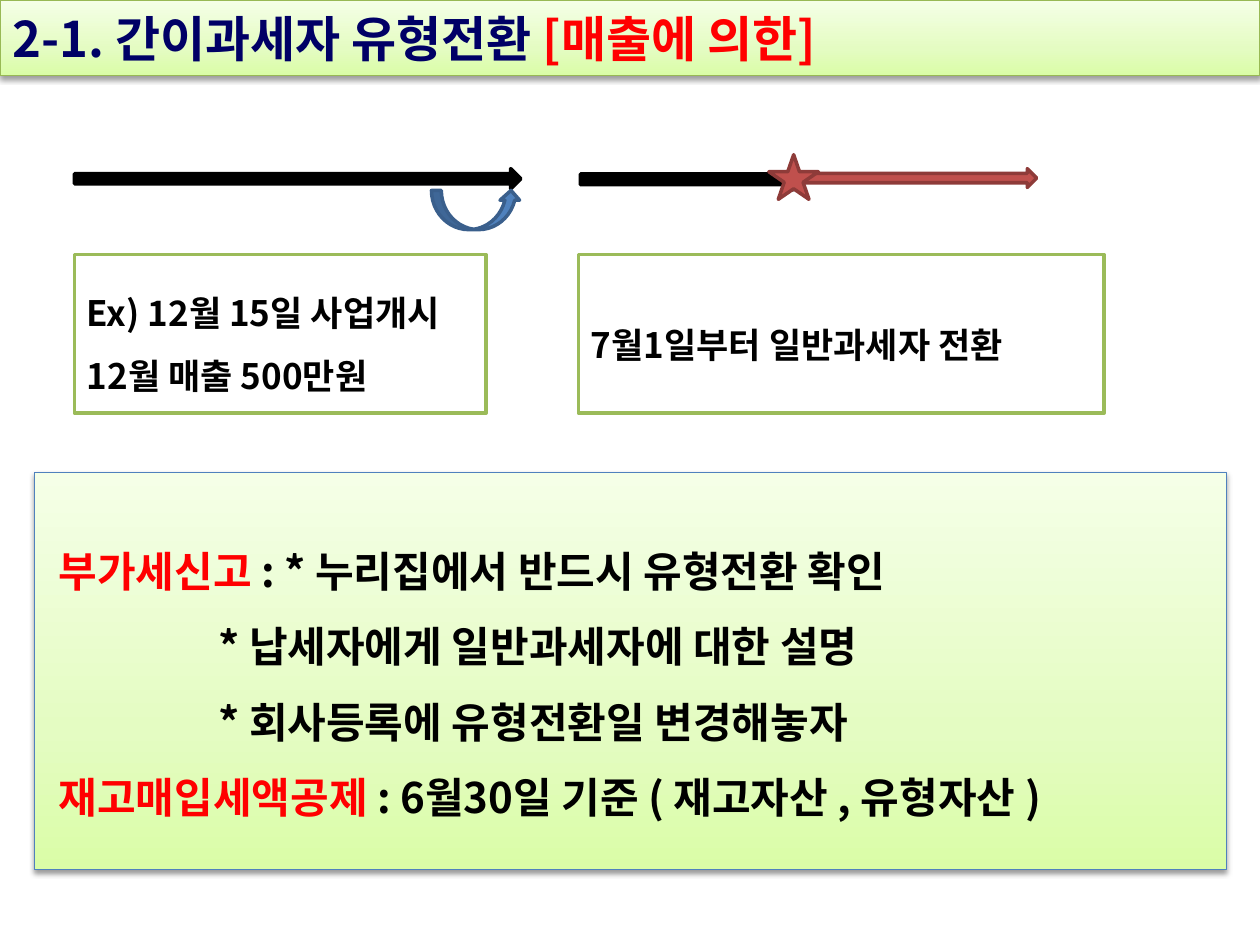
from copy import deepcopy

from lxml.etree import SubElement
from pptx import Presentation
from pptx.dml.color import RGBColor
from pptx.enum.shapes import MSO_SHAPE as SHAPE
from pptx.enum.text import MSO_ANCHOR as ANCHOR, PP_ALIGN as ALIGN
from pptx.oxml.ns import qn
from pptx.util import Cm, Pt

FONT = "Noto Sans CJK KR"
BLACK = RGBColor(0x00, 0x00, 0x00)
WHITE = RGBColor(0xFF, 0xFF, 0xFF)
RED = RGBColor(0xFF, 0x00, 0x00)
NAVY = RGBColor(0x00, 0x00, 0x66)
BLUE = RGBColor(0x4F, 0x81, 0xBD)
DARK_BLUE = RGBColor(0x3A, 0x5F, 0x8C)
BRICK = RGBColor(0xC0, 0x50, 0x4D)
DARK_BRICK = RGBColor(0x8E, 0x3B, 0x39)
GREEN = RGBColor(0x9B, 0xBB, 0x59)
DARK_GREEN = RGBColor(0x98, 0xB9, 0x55)
LIME_STOPS = [(0, RGBColor(0xDA, 0xFD, 0xA7)),
              (0.35, RGBColor(0xE4, 0xFC, 0xC2)),
              (1, RGBColor(0xF5, 0xFF, 0xE7))]

prs = Presentation()
prs.slide_width, prs.slide_height = Cm(25.4), Cm(19.05)
slide = prs.slides.add_slide(prs.slide_layouts[6])


def add_part(preset, left, top, width, height, line, fill=None, weight=2):
    """Add a shape; without a fill colour it gets the lime gradient and a soft shadow."""
    part = slide.shapes.add_shape(preset, Cm(left), Cm(top), Cm(width), Cm(height))
    part.shadow.inherit = False
    part.line.color.rgb = line
    part.line.width = Pt(weight)
    if fill is not None:
        part.fill.solid()
        part.fill.fore_color.rgb = fill
        return part

    part.fill.gradient()
    part.fill.gradient_angle = 90
    props = part._element.spPr
    stops = props.find(qn("a:gradFill")).find(qn("a:gsLst"))
    stops.append(deepcopy(stops[0]))
    for stop, (position, color) in zip(part.fill.gradient_stops, LIME_STOPS):
        stop.position = position
        stop.color.rgb = color
    shadow = SubElement(props.find(qn("a:effectLst")), qn("a:outerShdw"),
                        blurRad="40000", dist="20000", dir="5400000", rotWithShape="0")
    shade = SubElement(shadow, qn("a:srgbClr"), val="000000")
    SubElement(shade, qn("a:alpha"), val="38000")
    return part


def write(part, lines, size, spacing=None, indents=None):
    """Fill a shape with lines, each a list of (text, colour) pieces; indents are in cm."""
    frame = part.text_frame
    frame.word_wrap = True
    frame.vertical_anchor = ANCHOR.MIDDLE
    for i, pieces in enumerate(lines):
        paragraph = frame.paragraphs[0] if i == 0 else frame.add_paragraph()
        paragraph.alignment = ALIGN.LEFT
        if spacing:
            paragraph.line_spacing = spacing
        if indents:
            paragraph._p.get_or_add_pPr().set("marL", str(Cm(indents[i])))
        for text, color in pieces:
            run = paragraph.add_run()
            run.text = text
            run.font.name = FONT
            run.font.size = Pt(size)
            run.font.bold = True
            run.font.color.rgb = color
            SubElement(run._r.get_or_add_rPr(), qn("a:ea"), typeface=FONT)


title_bar = add_part(SHAPE.RECTANGLE, 0, 0, 25.4, 1.52, DARK_GREEN, weight=0.75)
write(title_bar, [[("2-1. 간이과세자 유형전환 ", NAVY), ("[매출에 의한]", RED)]], 28)

filing_notes = add_part(SHAPE.RECTANGLE, 0.7, 9.53, 24.03, 8, BLUE, weight=0.75)
write(filing_notes, [
    [("부가세신고 ", RED), (": * 누리집에서 반드시 유형전환 확인", BLACK)],
    [("* 납세자에게 일반과세자에 대한 설명", BLACK)],
    [("* 회사등록에 유형전환일 변경해놓자", BLACK)],
    [("재고매입세액공제 ", RED), (": 6월30일 기준 ( 재고자산 , 유형자산 )", BLACK)],
], 24, spacing=1.5, indents=[0.23, 3.45, 3.45, 0.23])

# Timeline: first year, then the year in which the taxpayer type changes
for preset, left, top, width, height, line, fill in [
    (SHAPE.RIGHT_ARROW, 1.5, 3.4, 9, 0.41, BLACK, BLACK),
    (SHAPE.RIGHT_ARROW, 11.7, 3.4, 4.5, 0.43, BLACK, BLACK),
    (SHAPE.CURVED_UP_ARROW, 8.7, 3.84, 1.8, 0.79, DARK_BLUE, BLUE),
    (SHAPE.RIGHT_ARROW, 16.2, 3.4, 4.7, 0.38, DARK_BRICK, BRICK),
    (SHAPE.STAR_5_POINT, 15.5, 3.12, 1, 0.9, DARK_BRICK, BRICK),
]:
    add_part(preset, left, top, width, height, line, fill)

for left, width, lines in [
    (1.5, 8.3, ["Ex) 12월 15일 사업개시", "12월 매출 500만원"]),
    (11.66, 10.6, ["7월1일부터 일반과세자 전환"]),
]:
    example = add_part(SHAPE.RECTANGLE, left, 5.13, width, 3.2, GREEN, WHITE)
    write(example, [[(text, BLACK)] for text in lines], 20, spacing=1.5)

prs.save("out.pptx")
